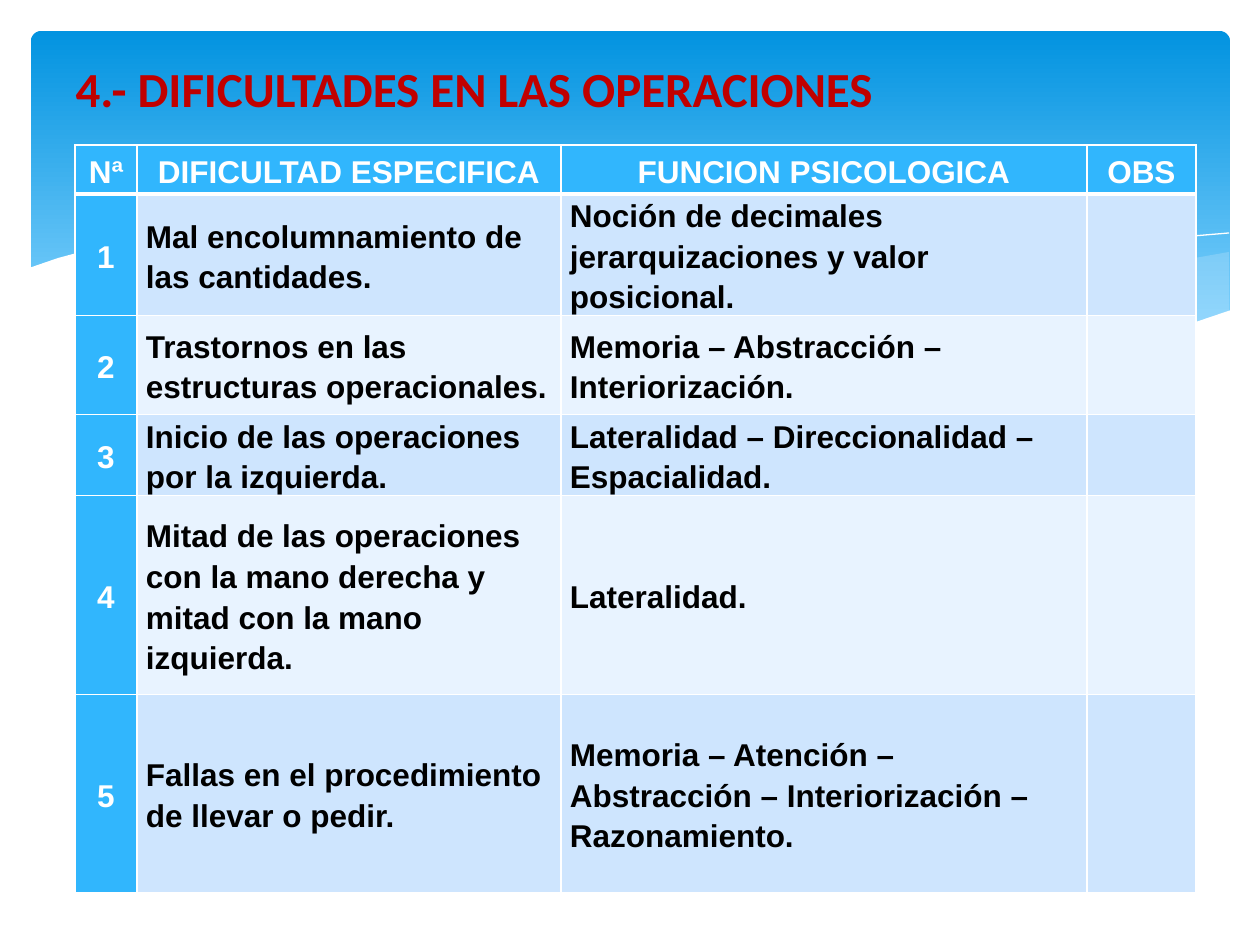
from lxml.etree import SubElement
from pptx import Presentation
from pptx.dml.color import RGBColor
from pptx.enum.shapes import MSO_SHAPE as Shape
from pptx.enum.text import MSO_ANCHOR as Anchor, MSO_AUTO_SIZE as AutoSize, PP_ALIGN as Align
from pptx.oxml.ns import qn
from pptx.util import Emu, Pt

PX = 914400 / 126
WHITE, BLACK, RED = "FFFFFF", "000000", "C00000"
ACCENT, MIST = "31B6FD", "C6E7FC"
BANDS = ["CEE5FE", "E8F3FF"]

RIGHT_SWELL = [(1229, 252), (1178, 261), (1123, 272), (1014, 299), (919, 319), (833, 334),
               (888, 341), (954, 348), (1026, 350), (1087, 347), (1140, 339), (1187, 326),
               (1229, 311)]
LONG_SWELL = [(1125, 344), (1017, 328), (890, 302), (793, 280), (682, 256), (586, 241),
              (479, 233), (413, 236), (360, 241), (456, 256), (566, 280), (713, 312),
              (819, 333), (927, 347), (1003, 350), (1068, 349)]
FALLING_CREST = [(389, 246), (457, 238), (545, 235), (643, 241), (766, 257), (877, 276),
                 (1002, 304), (1143, 343)]
RISING_CREST = [(772, 324), (876, 296), (978, 272), (1053, 257), (1128, 244), (1182, 237),
                (1229, 233)]
WHITE_WAVE = [(1231, 310), (1184, 326), (1133, 339), (1072, 346), (1003, 349), (915, 345),
              (816, 334), (699, 315), (563, 277), (460, 255), (368, 239), (290, 233),
              (223, 232), (166, 236), (120, 243), (84, 251), (58, 258), (29, 268),
              (29, 415), (1231, 415)]

COLUMN_WIDTHS = [62, 424, 526, 109]
ROW_HEIGHTS = [49, 121, 99, 81, 199, 198]
HEADINGS = ["Nª", "DIFICULTAD ESPECIFICA", "FUNCION PSICOLOGICA", "OBS"]
DIFFICULTIES = [
    ("Mal encolumnamiento de las cantidades.",
     "Noción de decimales jerarquizaciones y valor posicional."),
    ("Trastornos en las estructuras operacionales.",
     "Memoria – Abstracción – Interiorización."),
    ("Inicio de las operaciones por la izquierda.",
     "Lateralidad – Direccionalidad – Espacialidad."),
    ("Mitad de las operaciones con la mano derecha y mitad con la mano izquierda.",
     "Lateralidad."),
    ("Fallas en el procedimiento de llevar o pedir.",
     "Memoria – Atención – Abstracción – Interiorización – Razonamiento."),
]


def px(length):
    return Emu(round(length * PX))


def rgb(color):
    return RGBColor.from_string(color)


def paint(target, color):
    target.fill.solid()
    target.fill.fore_color.rgb = rgb(color)


def write(paragraph, text, font, size, color):
    run = paragraph.add_run()
    run.text = text
    run.font.name = font
    run.font.size = Pt(size)
    run.font.bold = True
    run.font.color.rgb = rgb(color)


def add_banner(slide):
    banner = slide.shapes.add_shape(Shape.ROUNDED_RECTANGLE, px(31), px(31), px(1199), px(340))
    banner.adjustments[0] = 0.03
    banner.shadow.inherit = False
    banner.line.fill.background()
    banner.fill.gradient()
    banner.fill.gradient_angle = 270
    for stop, position, color in zip(banner.fill.gradient_stops, (0, 0.9), ("0293E0", "83D3FE")):
        stop.position = position
        stop.color.rgb = rgb(color)


def add_outline(slide, points, close):
    builder = slide.shapes.build_freeform(*points[0], scale=PX)
    builder.add_line_segments(points[1:], close=close)
    outline = builder.convert_to_shape()
    outline.shadow.inherit = False
    return outline


def add_wave(slide, points, color, opacity=100):
    wave = add_outline(slide, points, True)
    wave.line.fill.background()
    paint(wave, color)
    if opacity < 100:
        tint = wave.fill._xPr.find(qn("a:solidFill"))[0]
        SubElement(tint, qn("a:alpha"), val=str(opacity * 1000))


def add_crest(slide, points):
    crest = add_outline(slide, points, False)
    crest.fill.background()
    crest.line.color.rgb = rgb(WHITE)
    crest.line.width = Pt(0)


def add_title(slide, text):
    title = slide.shapes.title
    title.left, title.top, title.width, title.height = px(63), px(39), px(1134), px(98)
    title.element.getparent().append(title.element)
    frame = title.text_frame
    frame.word_wrap = True
    frame.auto_size = AutoSize.NONE
    frame.vertical_anchor = Anchor.MIDDLE
    frame.paragraphs[0].alignment = Align.LEFT
    write(frame.paragraphs[0], text, "Calibri", 28, RED)


def add_borders(cell, top, bottom):
    properties = cell._tc.get_or_add_tcPr()
    for side, width in (("lnL", 1), ("lnR", 1), ("lnT", top), ("lnB", bottom)):
        border = SubElement(properties, qn(f"a:{side}"), w=str(Pt(width)))
        SubElement(SubElement(border, qn("a:solidFill")), qn("a:srgbClr"), val=WHITE)


def fill_cell(cell, text, row, column):
    is_label = row == 0 or column == 0
    add_borders(cell, 3 if row == 1 else 1, 3 if row == 0 else 1)
    paint(cell, ACCENT if is_label else BANDS[(row - 1) % 2])
    cell.vertical_anchor = Anchor.MIDDLE
    cell.margin_left = cell.margin_right = px(9)
    cell.margin_top = cell.margin_bottom = 0
    paragraph = cell.text_frame.paragraphs[0]
    paragraph.alignment = Align.CENTER if is_label else Align.LEFT
    paragraph.line_spacing = 1.15
    if text:
        write(paragraph, text, "Arial", 18, WHITE if is_label else BLACK)


def add_difficulty_table(slide):
    rows = [HEADINGS]
    rows += [(str(number), *entry, "") for number, entry in enumerate(DIFFICULTIES, 1)]
    table = slide.shapes.add_table(len(rows), len(HEADINGS), px(75), px(145),
                                   px(sum(COLUMN_WIDTHS)), px(sum(ROW_HEIGHTS))).table
    for column, width in zip(table.columns, COLUMN_WIDTHS):
        column.width = px(width)
    for row, height in zip(table.rows, ROW_HEIGHTS):
        row.height = px(height)
    for row, texts in enumerate(rows):
        for column, text in enumerate(texts):
            fill_cell(table.cell(row, column), text, row, column)


def main():
    deck = Presentation()
    deck.slide_width, deck.slide_height = px(1260), px(945)
    slide = deck.slides.add_slide(deck.slide_layouts[5])
    add_banner(slide)
    add_wave(slide, RIGHT_SWELL, MIST, 29)
    add_wave(slide, LONG_SWELL, MIST, 40)
    add_crest(slide, FALLING_CREST)
    add_crest(slide, RISING_CREST)
    add_wave(slide, WHITE_WAVE, WHITE)
    add_title(slide, "4.- DIFICULTADES EN LAS OPERACIONES")
    add_difficulty_table(slide)
    deck.save("out.pptx")


if __name__ == "__main__":
    main()
